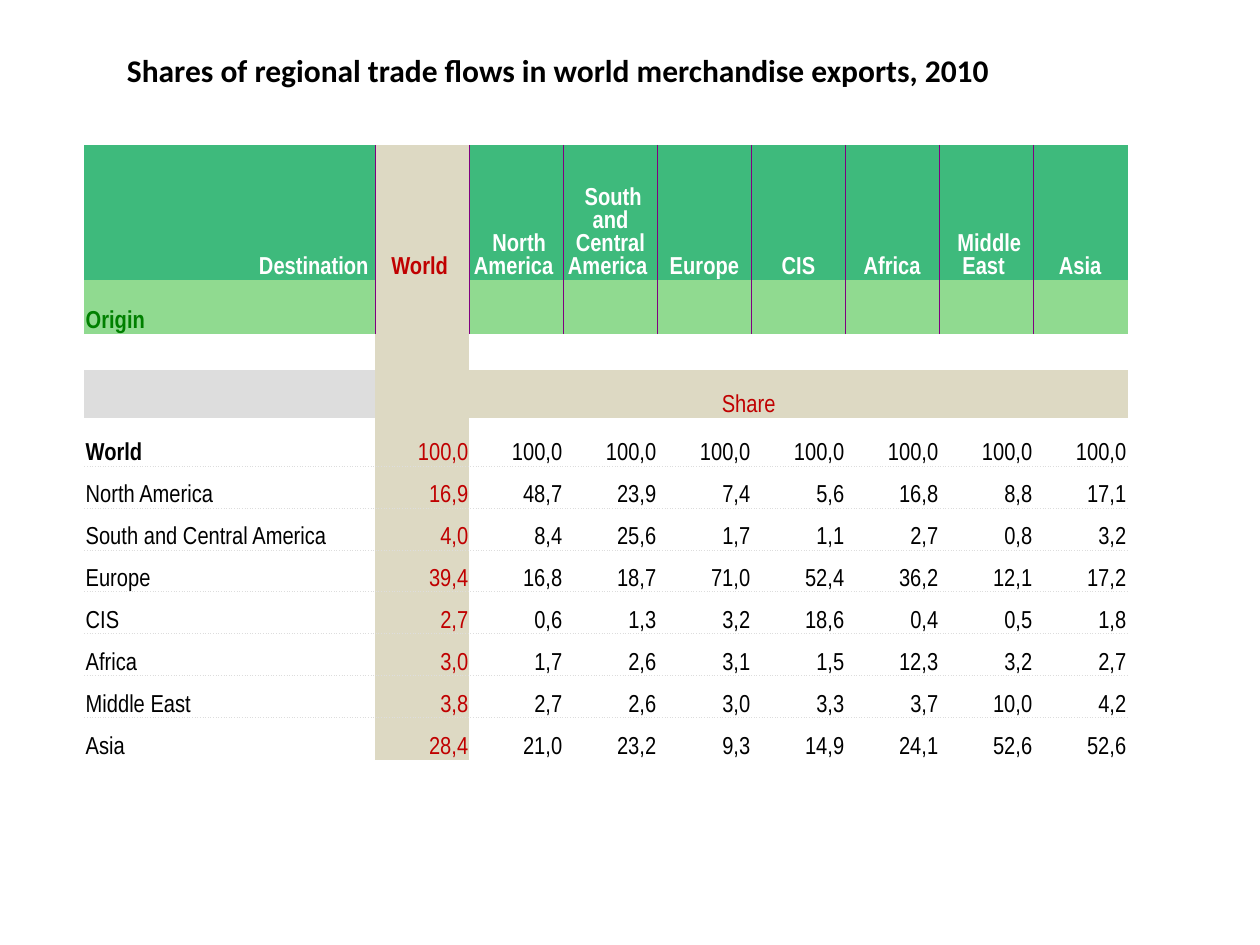
"""Build a slide with a table of regional shares in world merchandise exports."""
import pptx
import pptx.dml.color
import pptx.enum.text
import pptx.util
from lxml import etree
from pptx.util import Inches

TITLE = "Shares of regional trade flows in world merchandise exports, 2010"
REGIONS = ["North America", "South and Central America", "Europe", "CIS",
           "Africa", "Middle East", "Asia"]
SHARES = [
    ("World", "100,0 100,0 100,0 100,0 100,0 100,0 100,0 100,0"),
    ("North America", "16,9 48,7 23,9 7,4 5,6 16,8 8,8 17,1"),
    ("South and Central America", "4,0 8,4 25,6 1,7 1,1 2,7 0,8 3,2"),
    ("Europe", "39,4 16,8 18,7 71,0 52,4 36,2 12,1 17,2"),
    ("CIS", "2,7 0,6 1,3 3,2 18,6 0,4 0,5 1,8"),
    ("Africa", "3,0 1,7 2,6 3,1 1,5 12,3 3,2 2,7"),
    ("Middle East", "3,8 2,7 2,6 3,0 3,3 3,7 10,0 4,2"),
    ("Asia", "28,4 21,0 23,2 9,3 14,9 24,1 52,6 52,6"),
]
COLORS = {"black": "000000", "white": "FFFFFF", "red": "C00000", "tan": "DDD9C3",
          "header": "3EBA7C", "origin": "90DA90", "origin_text": "008000",
          "gray": "DDDDDD", "divider": "800080"}
LEFT, TOP, WIDTH, HEIGHT = 0.67, 1.15, 8.28, 4.88
LABEL_WIDTH = 2.31
TOP_HEIGHTS = [1.07, 0.43, 0.29, 0.38, 0.38]
HEADER, ORIGIN, GAP, SHARE, FIRST = range(5)
NO_STYLE = "{2D5ABB26-0587-4C30-8999-92F81FD0307C}"
NS = "{http://schemas.openxmlformats.org/drawingml/2006/main}"
ALIGN = pptx.enum.text.PP_ALIGN
CELL = {"margin_left": Inches(0.01), "margin_right": Inches(0.01),
        "margin_top": Inches(0.01), "margin_bottom": 0,
        "vertical_anchor": pptx.enum.text.MSO_ANCHOR.BOTTOM}


def rgb(name):
    return pptx.dml.color.RGBColor.from_string(COLORS[name])


def write(p, text, color, font, size, bold):
    r = p.add_run()
    r.text = text
    values = {"name": font, "size": pptx.util.Pt(size), "bold": bold}
    for key, value in values.items():
        setattr(r.font, key, value)
    r.font.color.rgb = rgb(color)


def add_border(cell, side, color, dash):
    ln = etree.SubElement(cell._tc.get_or_add_tcPr(), NS + "ln" + side,
                          w=str(pptx.util.Pt(0.5)))
    fill = etree.SubElement(ln, NS + "solidFill")
    etree.SubElement(fill, NS + "srgbClr", val=COLORS[color])
    etree.SubElement(ln, NS + "prstDash", val=dash)


def cell_borders(row, col, n_rows, n_cols):
    if row <= ORIGIN:
        sides = [("L", col > 0), ("R", col < n_cols - 1)]
        color, dash = "divider", "solid"
    else:
        sides = [("T", row > FIRST), ("B", FIRST <= row < n_rows - 1)]
        color, dash = "gray", "sysDot"
    return [(side, color, dash) for side, shown in sides if shown]


def cell_fill(row, col):
    if col == 1 or (row == SHARE and col > 1):
        return "tan"
    return {HEADER: "header", ORIGIN: "origin", GAP: None, SHARE: "gray"}.get(row, "white")


def cell_color(row, col):
    if col == 1:
        return "red"
    return {HEADER: "white", ORIGIN: "origin_text"}.get(row, "black")


def cell_align(row, col):
    if row == HEADER:
        return ALIGN.CENTER if col else ALIGN.RIGHT
    if row == SHARE:
        return ALIGN.CENTER
    return ALIGN.RIGHT if col else ALIGN.LEFT


def add_share_table(s):
    n_cols = len(REGIONS) + 2
    blank = [""] * n_cols
    rows = [["Destination ", "World "] + [f" {name} " for name in REGIONS],
            ["Origin"] + blank[1:], blank, ["", "Share "] + blank[2:]]
    rows += [[name] + values.split() for name, values in SHARES]
    table = s.shapes.add_table(len(rows), n_cols, Inches(LEFT), Inches(TOP),
                               Inches(WIDTH), Inches(HEIGHT)).table
    table.first_row = table.horz_banding = False
    table._tbl.tblPr.find(NS + "tableStyleId").text = NO_STYLE

    for i, column in enumerate(table.columns):
        column.width = Inches((WIDTH - LABEL_WIDTH) / (n_cols - 1) if i else LABEL_WIDTH)
    rest = (HEIGHT - sum(TOP_HEIGHTS)) / (len(rows) - len(TOP_HEIGHTS))
    for i, row in enumerate(table.rows):
        row.height = Inches(TOP_HEIGHTS[i] if i < len(TOP_HEIGHTS) else rest)
    table.cell(SHARE, 1).merge(table.cell(SHARE, n_cols - 1))

    for i, row in enumerate(rows):
        for j, text in enumerate(row):
            cell = table.cell(i, j)
            for key, value in CELL.items():
                setattr(cell, key, value)
            for border in cell_borders(i, j, len(rows), n_cols):
                add_border(cell, *border)
            fill = cell_fill(i, j)
            if fill:
                cell.fill.solid()
                cell.fill.fore_color.rgb = rgb(fill)
            else:
                cell.fill.background()
            p = cell.text_frame.paragraphs[0]
            p.alignment = cell_align(i, j)
            if text:
                bold = i <= ORIGIN or (i == FIRST and j == 0)
                write(p, text, cell_color(i, j), "Arial Narrow", 14, bold)
            else:
                etree.SubElement(p._p, NS + "endParaRPr", sz="1400")


def main():
    prs = pptx.Presentation()
    prs.slide_width, prs.slide_height = Inches(10), Inches(7.5)
    s = prs.slides.add_slide(prs.slide_layouts[6])
    add_share_table(s)
    tf = s.shapes.add_textbox(Inches(0.91), Inches(0.36), Inches(7.64), Inches(0.4)).text_frame
    tf.word_wrap = True
    tf.auto_size = pptx.enum.text.MSO_AUTO_SIZE.SHAPE_TO_FIT_TEXT
    write(tf.paragraphs[0], TITLE, "black", "Calibri", 18, True)
    prs.save("out.pptx")


if __name__ == "__main__":
    main()
